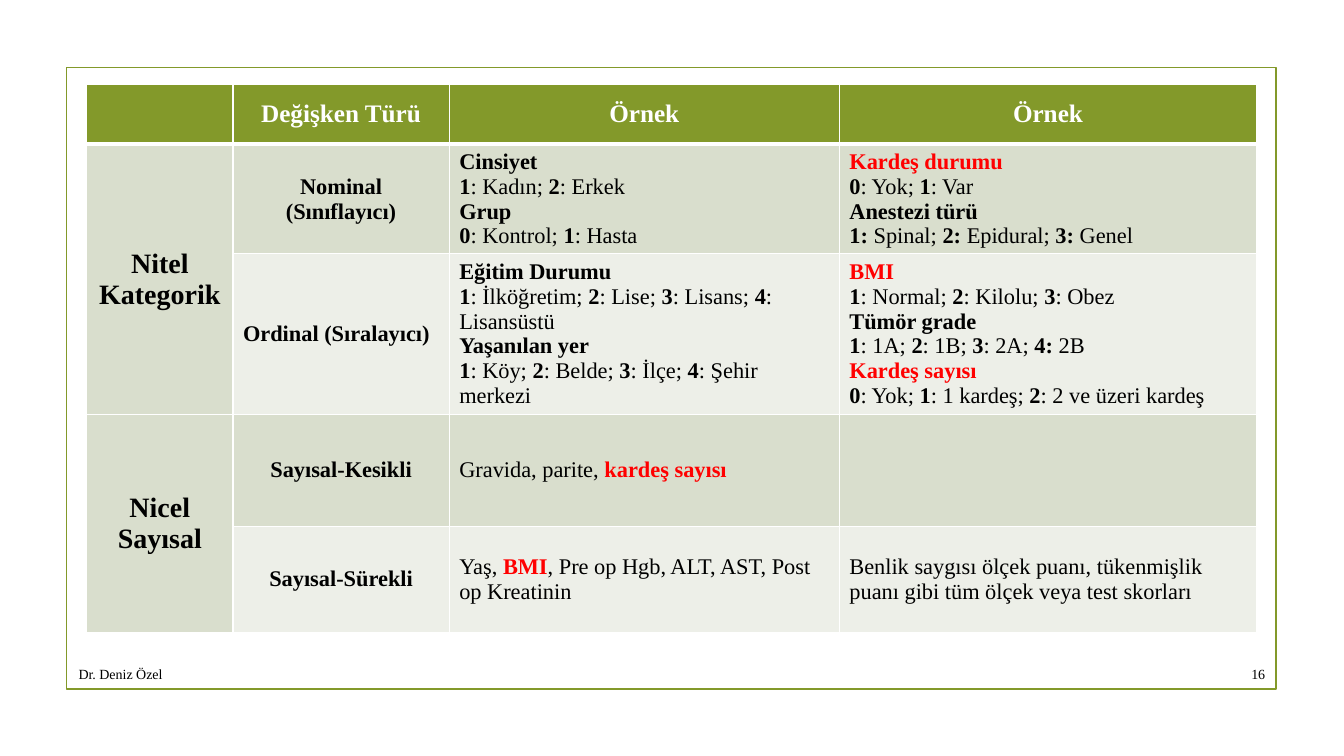
from lxml.etree import SubElement
from pptx import Presentation
from pptx.dml.color import RGBColor
from pptx.enum.shapes import MSO_SHAPE
from pptx.enum.text import MSO_ANCHOR, PP_ALIGN
from pptx.oxml.ns import qn
from pptx.util import Pt

OLIVE = RGBColor(0x83, 0x99, 0x2A)
SAGE = RGBColor(0xD9, 0xDE, 0xCD)
PALE = RGBColor(0xED, 0xEF, 0xE8)
WHITE = RGBColor(0xFF, 0xFF, 0xFF)
BLACK = RGBColor(0, 0, 0)
RED = RGBColor(0xFF, 0, 0)
FONT = "Times New Roman"

COLUMN_WIDTHS = [104.4, 154.5, 278.7, 298.1]
ROW_HEIGHTS = [42.5, 78, 114.5, 80, 76]
ROW_FILLS = [OLIVE, SAGE, PALE, SAGE, PALE]
CATEGORY_ROWS = [(1, 2), (3, 4)]

# One list of paragraphs per cell: *bold*, *!bold red*
VARIABLES = [
    [[], ["*Değişken Türü*"], ["*Örnek*"], ["*Örnek*"]],
    [["*Nitel*", "*Kategorik*"],
     ["*Nominal (Sınıflayıcı)*"],
     ["*Cinsiyet*", "*1*: Kadın; *2*: Erkek",
      "*Grup*", "*0*: Kontrol; *1*: Hasta"],
     ["*!Kardeş durumu*", "*0*: Yok; *1*: Var",
      "*Anestezi türü*", "*1: *Spinal; *2: *Epidural; *3: *Genel"]],
    [[],
     ["*Ordinal (Sıralayıcı)*"],
     ["*Eğitim Durumu*",
      "*1*: İlköğretim; *2*: Lise; *3*: Lisans; *4*: Lisansüstü",
      "*Yaşanılan yer*",
      "*1*: Köy; *2*: Belde; *3*: İlçe; *4*: Şehir merkezi"],
     ["*!BMI*", "*1*: Normal; *2*: Kilolu; *3*: Obez",
      "*Tümör grade*", "*1*: 1A; *2*: 1B; *3*: 2A; *4:* 2B",
      "*!Kardeş sayısı*",
      "*0*: Yok; *1*: 1 kardeş; *2*: 2 ve üzeri kardeş"]],
    [["*Nicel*", "*Sayısal*"],
     ["*Sayısal-Kesikli*"],
     ["Gravida, parite, *!kardeş sayısı*"],
     []],
    [[],
     ["*Sayısal-Sürekli*"],
     ["Yaş, *!BMI*, Pre op Hgb, ALT, AST, Post op Kreatinin"],
     ["Benlik saygısı ölçek puanı, tükenmişlik puanı gibi tüm ölçek "
      "veya test skorları"]],
]


def write_paragraphs(frame, lines, size, color, align):
    """Write marked-up lines; every second piece between asterisks is bold."""
    for index, line in enumerate(lines):
        paragraph = frame.add_paragraph() if index else frame.paragraphs[0]
        paragraph.alignment = align
        for position, piece in enumerate(line.split("*")):
            if not piece:
                continue
            run = paragraph.add_run()
            run.text = piece.lstrip("!")
            look = {"name": FONT, "size": Pt(size), "bold": position % 2 == 1}
            for key, value in look.items():
                setattr(run.font, key, value)
            run.font.color.rgb = RED if piece.startswith("!") else color


def add_borders(cell, top, bottom):
    properties = cell._tc.get_or_add_tcPr()
    for side, width in {"L": 1, "R": 1, "T": top, "B": bottom}.items():
        line = SubElement(properties, qn(f"a:ln{side}"), w=str(Pt(width)))
        fill = SubElement(line, qn("a:solidFill"))
        SubElement(fill, qn("a:srgbClr"), val=str(WHITE))


def add_page_frame(slide):
    frame = slide.shapes.add_shape(MSO_SHAPE.RECTANGLE, Pt(47.5), Pt(48.2),
                                   Pt(864), Pt(444.2))
    frame.shadow.inherit = False
    frame.fill.background()
    frame.line.color.rgb = OLIVE
    frame.line.width = Pt(1.25)


def cell_style(row, column):
    """Return text size, colour and alignment for a place in the table."""
    if row == 0:
        return 18, WHITE, PP_ALIGN.CENTER
    if column == 0:
        return 20, BLACK, PP_ALIGN.CENTER
    centred = column == 1 and row != 2
    return 16, BLACK, PP_ALIGN.CENTER if centred else PP_ALIGN.LEFT


def add_variable_table(slide):
    table = slide.shapes.add_table(
        len(ROW_HEIGHTS), len(COLUMN_WIDTHS), Pt(62), Pt(60.5),
        Pt(sum(COLUMN_WIDTHS)), Pt(sum(ROW_HEIGHTS))).table
    table.horz_banding = False
    for column, width in zip(table.columns, COLUMN_WIDTHS):
        column.width = Pt(width)
    for row, height in zip(table.rows, ROW_HEIGHTS):
        row.height = Pt(height)
    for first, last in CATEGORY_ROWS:
        table.cell(first, 0).merge(table.cell(last, 0))

    for r, row in enumerate(VARIABLES):
        for c, lines in enumerate(row):
            cell = table.cell(r, c)
            add_borders(cell, 3 if r == 1 else 1, 3 if r == 0 else 1)
            cell.fill.solid()
            cell.fill.fore_color.rgb = SAGE if r and c == 0 else ROW_FILLS[r]
            cell.vertical_anchor = MSO_ANCHOR.MIDDLE
            write_paragraphs(cell.text_frame, lines, *cell_style(r, c))


def add_footer(slide, text, left, width, align):
    frame = slide.shapes.add_textbox(Pt(left), Pt(470.2), Pt(width),
                                     Pt(22.3)).text_frame
    frame.word_wrap = True
    frame.vertical_anchor = MSO_ANCHOR.MIDDLE
    write_paragraphs(frame, [text], 10, BLACK, align)


def main():
    deck = Presentation()
    deck.slide_width, deck.slide_height = Pt(960), Pt(540)
    slide = deck.slides.add_slide(deck.slide_layouts[6])
    add_page_frame(slide)
    add_variable_table(slide)
    # Author and page number
    add_footer(slide, "Dr. Deniz Özel", 49, 575.3, PP_ALIGN.LEFT)
    add_footer(slide, "16", 868.3, 42.5, PP_ALIGN.RIGHT)
    deck.save("out.pptx")


if __name__ == "__main__":
    main()
